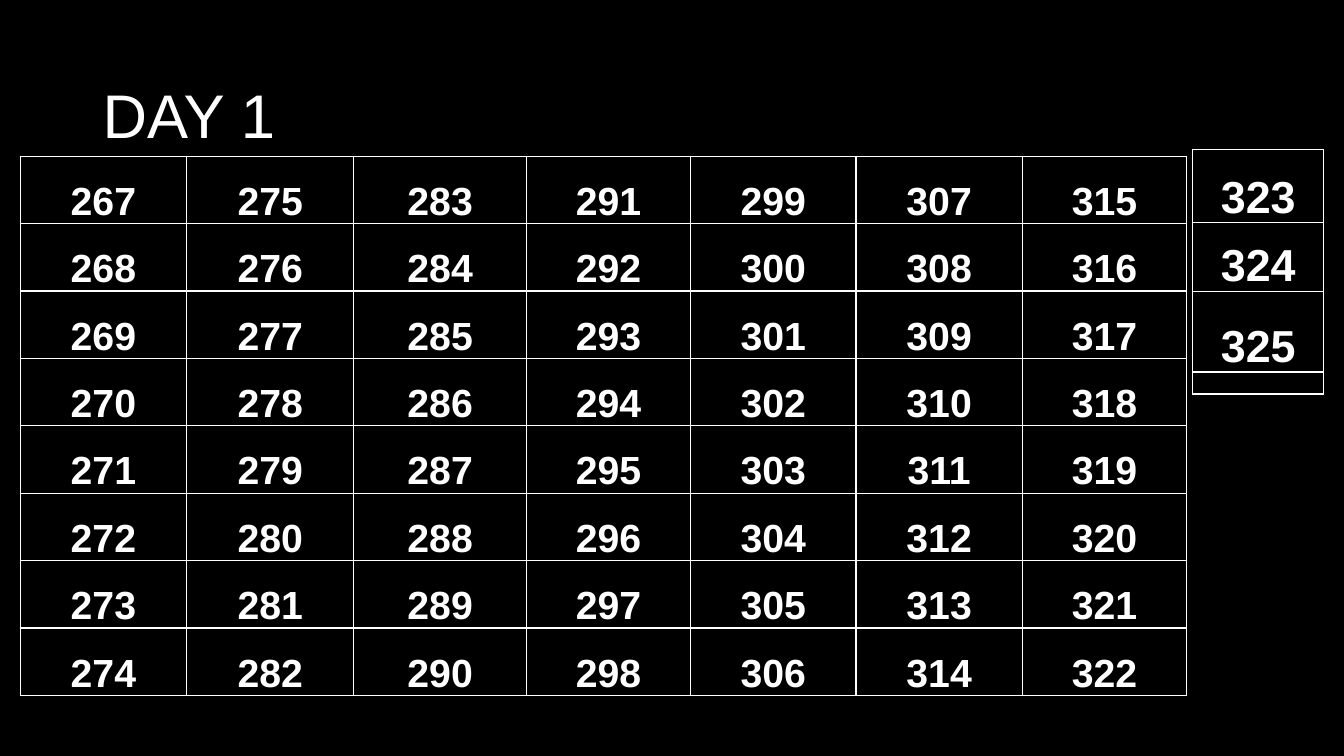
from lxml.etree import SubElement
from pptx import Presentation
from pptx.dml.color import RGBColor
from pptx.enum.text import MSO_ANCHOR as ANCHOR, PP_ALIGN as ALIGN
from pptx.oxml.ns import qn
from pptx.util import Inches, Pt

COLORS = {"background": "000000", "ink": "FFFFFF"}
FIRST, LAST = 267, 322
ROWS = 8
COL_WIDTHS = [1.65, 1.66, 1.71, 1.63, 1.64, 1.65, 1.63]
EXTRA_HEIGHTS = [0.73, 0.68, 0.8, 0.22]


class SlideBuilder:
    font = "Arial"

    def __init__(self, prs):
        self.s = prs.slides.add_slide(prs.slide_layouts[6])
        fill = self.s.background.fill
        fill.solid()
        fill.fore_color.rgb = RGBColor.from_string(COLORS["background"])

    def run(self, p, text, size, bold=False):
        r = p.add_run()
        r.text = text
        r.font.name = self.font
        r.font.size = Pt(size)
        r.font.bold = bold
        r.font.color.rgb = RGBColor.from_string(COLORS["ink"])

    def title(self, text, left, top, width, height):
        box = self.s.shapes.add_textbox(
            Inches(left), Inches(top), Inches(width), Inches(height))
        tf = box.text_frame
        tf.word_wrap = True
        tf.vertical_anchor = ANCHOR.MIDDLE
        self.run(tf.paragraphs[0], text, 44)

    def borders(self, cell):
        props = cell._tc.get_or_add_tcPr()
        for side in ("lnL", "lnR", "lnT", "lnB"):
            line = SubElement(props, qn(f"a:{side}"), w=str(Pt(1)))
            solid = SubElement(line, qn("a:solidFill"))
            SubElement(solid, qn("a:srgbClr"), val=COLORS["ink"])

    def cell(self, cell, text, size):
        self.borders(cell)
        cell.fill.background()
        cell.vertical_anchor = ANCHOR.BOTTOM
        cell.margin_left = cell.margin_right = cell.margin_top = Inches(0.01)
        cell.margin_bottom = 0
        p = cell.text_frame.paragraphs[0]
        p.alignment = ALIGN.CENTER
        if text:
            p.line_spacing = 1.19
            p.space_after = Pt(14)
            self.run(p, text, size, bold=True)
        else:
            # A small end mark keeps the empty row from growing
            SubElement(p._p, qn("a:endParaRPr"), sz="1000")

    def table(self, left, top, widths, heights, columns, size):
        """Draw a bordered grid from lists of column texts."""
        frame = self.s.shapes.add_table(
            len(heights), len(widths), Inches(left), Inches(top),
            Inches(sum(widths)), Inches(sum(heights)))
        tbl = frame.table
        tbl.first_row = tbl.horz_banding = False
        for row, height in zip(tbl.rows, heights):
            row.height = Inches(height)
        for c, (width, texts) in enumerate(zip(widths, columns)):
            tbl.columns[c].width = Inches(width)
            for r, text in enumerate(texts):
                self.cell(tbl.cell(r, c), text, size)


def main():
    prs = Presentation()
    prs.slide_width, prs.slide_height = Inches(13.33), Inches(7.5)
    slide = SlideBuilder(prs)
    slide.title("DAY 1", 0.92, 0.4, 11.5, 1.45)
    numbers = [[str(n) for n in range(start, start + ROWS)]
               for start in range(FIRST, LAST + 1, ROWS)]
    slide.table(0.2, 1.55, COL_WIDTHS, [5.35 / ROWS] * ROWS, numbers, 28)
    slide.table(11.83, 1.48, [1.3], EXTRA_HEIGHTS,
                [["323", "324", "325", ""]], 32)
    prs.save("out.pptx")


if __name__ == "__main__":
    main()
